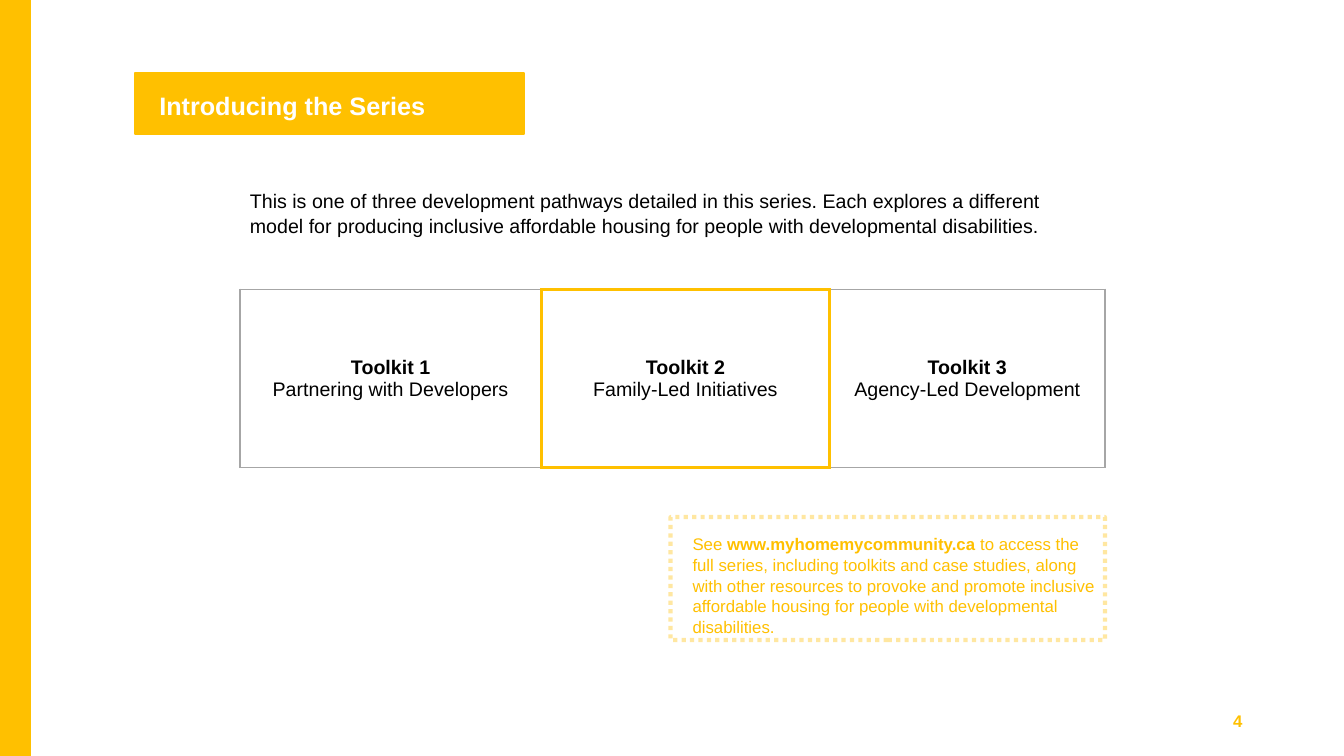
from lxml.etree import SubElement
from pptx import Presentation
from pptx.dml.color import RGBColor
from pptx.enum.dml import MSO_LINE
from pptx.enum.shapes import MSO_SHAPE
from pptx.enum.text import MSO_ANCHOR, MSO_AUTO_SIZE, PP_ALIGN
from pptx.oxml.ns import qn
from pptx.util import Inches, Pt

GOLD, GREY, BLACK, WHITE = "FFC000", "A6A6A6", "000000", "FFFFFF"
TOOLKITS = [
    ("Toolkit 1", "Partnering with Developers"),
    ("Toolkit 2", "Family-Led Initiatives"),
    ("Toolkit 3", "Agency-Led Development"),
]
COLUMN_WIDTHS = [2.99, 2.86, 2.73]
THIN, THICK = (GREY, 1), (GOLD, 2.25)


def rgb(hex_color):
    return RGBColor.from_string(hex_color)


def inches(*lengths):
    return [Inches(length) for length in lengths]


def style_run(run, size, color, bold=False):
    run.font.name = "Arial"
    run.font.size = Pt(size)
    run.font.bold = bold
    run.font.color.rgb = rgb(color)


def add_box(slide, box, line_width, fill=None):
    rect = slide.shapes.add_shape(MSO_SHAPE.RECTANGLE, *inches(*box))
    rect.shadow.inherit = False
    if fill:
        rect.fill.solid()
        rect.fill.fore_color.rgb = rgb(fill)
    else:
        rect.fill.background()
    rect.line.color.rgb = rgb(GOLD)
    rect.line.width = Pt(line_width)
    return rect


def add_dotted_frame(slide, box):
    frame = add_box(slide, box, 3)
    frame.line.dash_style = MSO_LINE.ROUND_DOT
    line_color = frame.line._get_or_add_ln().find(".//" + qn("a:srgbClr"))
    SubElement(line_color, qn("a:alpha"), val="36000")


def add_text(slide, box, pieces, size, color, spacing=1.0,
             align=PP_ALIGN.LEFT, anchor=MSO_ANCHOR.TOP):
    """Add one paragraph from (text, bold) pieces."""
    frame = slide.shapes.add_textbox(*inches(*box)).text_frame
    frame.word_wrap = True
    frame.vertical_anchor = anchor
    paragraph = frame.paragraphs[0]
    paragraph.alignment = align
    paragraph.line_spacing = spacing
    for text, bold in pieces:
        run = paragraph.add_run()
        run.text = text
        style_run(run, size, color, bold)


def set_title(slide, box, text):
    title = slide.shapes.title
    title.left, title.top, title.width, title.height = inches(*box)
    frame = title.text_frame
    frame.text = text
    frame.word_wrap = True
    frame.auto_size = MSO_AUTO_SIZE.NONE
    frame.vertical_anchor = MSO_ANCHOR.TOP
    frame.paragraphs[0].alignment = PP_ALIGN.LEFT
    style_run(frame.paragraphs[0].runs[0], 18, WHITE, True)
    # Bring the title in front of its banner
    title._element.getparent().append(title._element)


def set_borders(cell, left, top, right, bottom):
    properties = cell._tc.get_or_add_tcPr()
    sides = zip(("lnL", "lnR", "lnT", "lnB"), (left, right, top, bottom))
    for position, (side, (color, width)) in enumerate(sides):
        line = properties.makeelement(qn("a:" + side), {"w": str(Pt(width))})
        fill = SubElement(line, qn("a:solidFill"))
        SubElement(fill, qn("a:srgbClr"), val=color)
        properties.insert(position, line)


def fill_toolkit_cell(cell, toolkit):
    cell.fill.background()
    cell.vertical_anchor = MSO_ANCHOR.MIDDLE
    cell.margin_left = cell.margin_right = Inches(0.07)
    cell.margin_top = cell.margin_bottom = 0
    cell.text_frame.text = "\n".join(toolkit)
    for row, paragraph in enumerate(cell.text_frame.paragraphs):
        paragraph.alignment = PP_ALIGN.CENTER
        style_run(paragraph.runs[0], 14, BLACK, bold=row == 0)


def add_toolkit_table(slide, box, current):
    """Add the row of toolkits, with the current one outlined in gold."""
    table = slide.shapes.add_table(1, len(TOOLKITS), *inches(*box)).table
    table.first_row = table.horz_banding = False
    for index, (toolkit, width) in enumerate(zip(TOOLKITS, COLUMN_WIDTHS)):
        table.columns[index].width = Inches(width)
        cell = table.cell(0, index)
        fill_toolkit_cell(cell, toolkit)
        edge = THICK if index == current else THIN
        left = THICK if index == current + 1 else edge
        right = THICK if index == current - 1 else edge
        set_borders(cell, left, edge, right, edge)


def main():
    deck = Presentation()
    deck.slide_width, deck.slide_height = inches(13.33, 7.5)
    slide = deck.slides.add_slide(deck.slide_layouts[5])

    # Banner with title, and side bar
    add_box(slide, (1.34, 0.72, 3.86, 0.61), 1.5, GOLD)
    set_title(slide, (1.48, 0.85, 4.46, 0.71), "Introducing the Series")
    add_box(slide, (-0.03, 0, 0.33, 7.5), 1, GOLD)

    # Toolkits
    add_toolkit_table(slide, (2.38, 2.87, 8.58, 1.77), current=1)

    # Page number
    add_text(slide, (9.42, 6.95, 3, 0.4), [("4", True)], 12, GOLD,
             align=PP_ALIGN.RIGHT, anchor=MSO_ANCHOR.MIDDLE)

    # Introduction
    add_text(slide, (2.38, 1.81, 8.58, 0.81), [
        ("This is one of three development pathways detailed in this series. "
         "Each explores a different model for producing inclusive affordable "
         "housing for people with developmental disabilities.", False),
    ], 14, BLACK, spacing=1.07)

    # Pointer to the full series
    add_text(slide, (6.77, 5.24, 4.19, 1.11), [
        ("See ", False),
        ("www.myhomemycommunity.ca", True),
        (" to access the full series, including toolkits and case studies, "
         "along with other resources to provoke and promote inclusive "
         "affordable housing for people with developmental disabilities.",
         False),
    ], 12, GOLD, spacing=1.03)
    add_dotted_frame(slide, (6.65, 5.13, 4.31, 1.22))

    deck.save("out.pptx")


if __name__ == "__main__":
    main()
